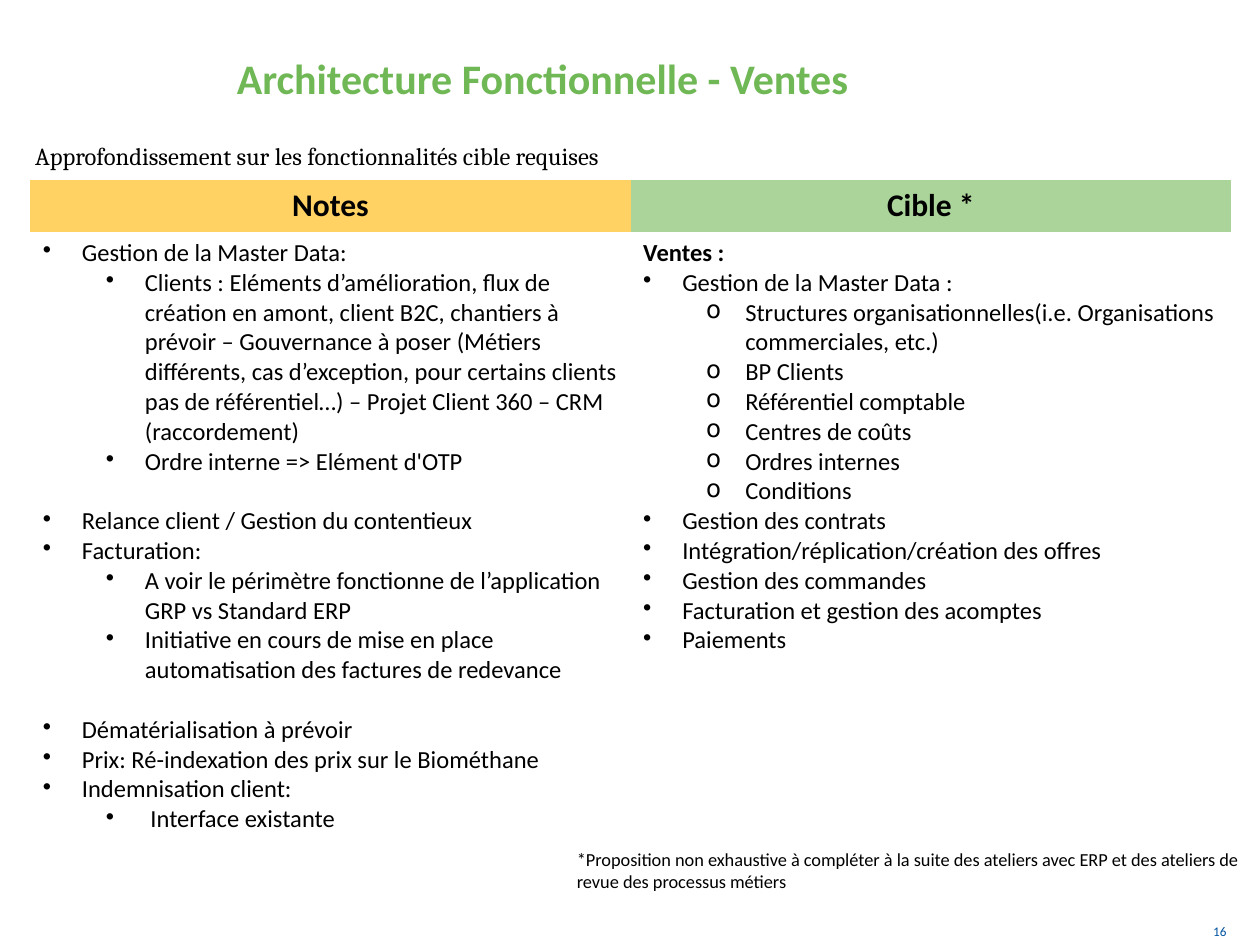
from dataclasses import dataclass

from lxml.etree import SubElement
from pptx import Presentation
from pptx.dml.color import RGBColor
from pptx.enum.text import MSO_ANCHOR, MSO_AUTO_SIZE, PP_ALIGN
from pptx.oxml.ns import qn
from pptx.util import Inches, Pt

BLACK = RGBColor(0x00, 0x00, 0x00)
GREEN = RGBColor(0x70, 0xB8, 0x56)
BLUE = RGBColor(0x00, 0x53, 0xA1)
YELLOW_FILL = RGBColor(0xFF, 0xD2, 0x63)
GREEN_FILL = RGBColor(0xAA, 0xD4, 0x9A)

PLAIN_TABLE_STYLE = "{2D5ABB26-0587-4C30-8999-92F81FD0307C}"
HANGING = 0.31
LEVEL_STEP = 0.5
LINE_GAP = Pt(17)


@dataclass
class Item:
    text: str
    level: int = 0
    bullet: str = "•"
    bold: bool = False
    gap_before: bool = False


@dataclass
class Column:
    heading: str
    fill: RGBColor
    items: list[Item]


@dataclass
class Label:
    text: str
    box: tuple[float, float, float, float]
    size: float
    font: str = "Calibri"
    color: RGBColor = BLACK
    anchor: MSO_ANCHOR = MSO_ANCHOR.TOP


COLUMNS = [
    Column("Notes", YELLOW_FILL, [
        Item("Gestion de la Master Data:"),
        Item("Clients : Eléments d’amélioration, flux de création en amont, "
             "client B2C, chantiers à prévoir – Gouvernance à poser (Métiers "
             "différents, cas d’exception, pour certains clients pas de "
             "référentiel…) – Projet Client 360 – CRM (raccordement)", 1),
        Item("Ordre interne => Elément d'OTP", 1),
        Item("Relance client / Gestion du contentieux", gap_before=True),
        Item("Facturation:"),
        Item("A voir le périmètre fonctionne de l’application GRP vs Standard ERP", 1),
        Item("Initiative en cours de mise en place automatisation des "
             "factures de redevance", 1),
        Item("Dématérialisation à prévoir", gap_before=True),
        Item("Prix: Ré-indexation des prix sur le Biométhane"),
        Item("Indemnisation client:"),
        Item(" Interface existante", 1),
    ]),
    Column("Cible *", GREEN_FILL, [
        Item("Ventes :", bullet="", bold=True),
        Item("Gestion de la Master Data :"),
        Item("Structures organisationnelles(i.e. Organisations commerciales, etc.)", 1, "o"),
        Item("BP Clients", 1, "o"),
        Item("Référentiel comptable", 1, "o"),
        Item("Centres de coûts", 1, "o"),
        Item("Ordres internes", 1, "o"),
        Item("Conditions", 1, "o"),
        Item("Gestion des contrats"),
        Item("Intégration/réplication/création des offres"),
        Item("Gestion des commandes"),
        Item("Facturation et gestion des acomptes"),
        Item("Paiements"),
    ]),
]

TITLE = Label("Architecture Fonctionnelle - Ventes", (1.78, 0.37, 6.42, 0.84), 24, color=GREEN)
LABELS = [
    Label("Approfondissement sur les fonctionnalités cible requises",
          (0.18, 1.07, 9.69, 0.34), 14, "Cambria"),
    Label("*Proposition non exhaustive à compléter à la suite des ateliers avec "
          "ERP et des ateliers de revue des processus métiers",
          (4.48, 6.68, 5.52, 0.45), 10.5),
    Label("16", (9.53, 7.2, 0.42, 0.3), 7.5, color=BLUE, anchor=MSO_ANCHOR.BOTTOM),
]


def write(p, text: str, size: float, font="Calibri", color=BLACK, bold=False) -> None:
    r = p.add_run()
    r.text = text
    values = {"name": font, "size": Pt(size), "bold": bold}
    for name, value in values.items():
        setattr(r.font, name, value)
    r.font.color.rgb = color


def fill_label(sp, label: Label, bold: bool = False) -> None:
    tf = sp.text_frame
    settings = {"word_wrap": True, "auto_size": MSO_AUTO_SIZE.NONE,
                "vertical_anchor": label.anchor}
    for name, value in settings.items():
        setattr(tf, name, value)
    p = tf.paragraphs[0]
    p.alignment = PP_ALIGN.LEFT
    write(p, label.text, label.size, label.font, label.color, bold)


def add_title(slide, label: Label) -> None:
    sp = slide.shapes.title
    for name, value in zip(("left", "top", "width", "height"), label.box):
        setattr(sp, name, Inches(value))
    fill_label(sp, label, bold=True)


def add_label(slide, label: Label) -> None:
    fill_label(slide.shapes.add_textbox(*map(Inches, label.box)), label)


def add_item(p, item: Item) -> None:
    p.level = item.level
    if item.gap_before:
        p.space_before = LINE_GAP
    if item.bullet:
        pPr = p._p.get_or_add_pPr()
        pPr.set("marL", str(Inches(HANGING + LEVEL_STEP * item.level)))
        pPr.set("indent", str(-Inches(HANGING)))
        SubElement(pPr, qn("a:buChar")).set("char", item.bullet)
    write(p, item.text, 14, bold=item.bold)


def add_columns_table(slide, columns: list[Column]) -> None:
    frame = slide.shapes.add_table(2, len(columns), Inches(0.24), Inches(1.43),
                                   Inches(9.53), Inches(5.17))
    table = frame.table
    table.first_row = table.horz_banding = False
    table._tbl.tblPr.find(qn("a:tableStyleId")).text = PLAIN_TABLE_STYLE
    for row, height in zip(table.rows, (0.41, 4.76)):
        row.height = Inches(height)
    for i, column in enumerate(columns):
        head, body = table.cell(0, i), table.cell(1, i)
        head.fill.solid()
        head.fill.fore_color.rgb = column.fill
        p = head.text_frame.paragraphs[0]
        p.alignment = PP_ALIGN.CENTER
        write(p, column.heading, 18, bold=True)

        body.fill.background()
        tf = body.text_frame
        for n, item in enumerate(column.items):
            add_item(tf.add_paragraph() if n else tf.paragraphs[0], item)


def main() -> None:
    prs = Presentation()
    prs.slide_width, prs.slide_height = Inches(10), Inches(7.5)
    slide = prs.slides.add_slide(prs.slide_layouts[5])
    add_title(slide, TITLE)
    add_columns_table(slide, COLUMNS)
    for label in LABELS:
        add_label(slide, label)
    prs.save("out.pptx")


if __name__ == "__main__":
    main()
